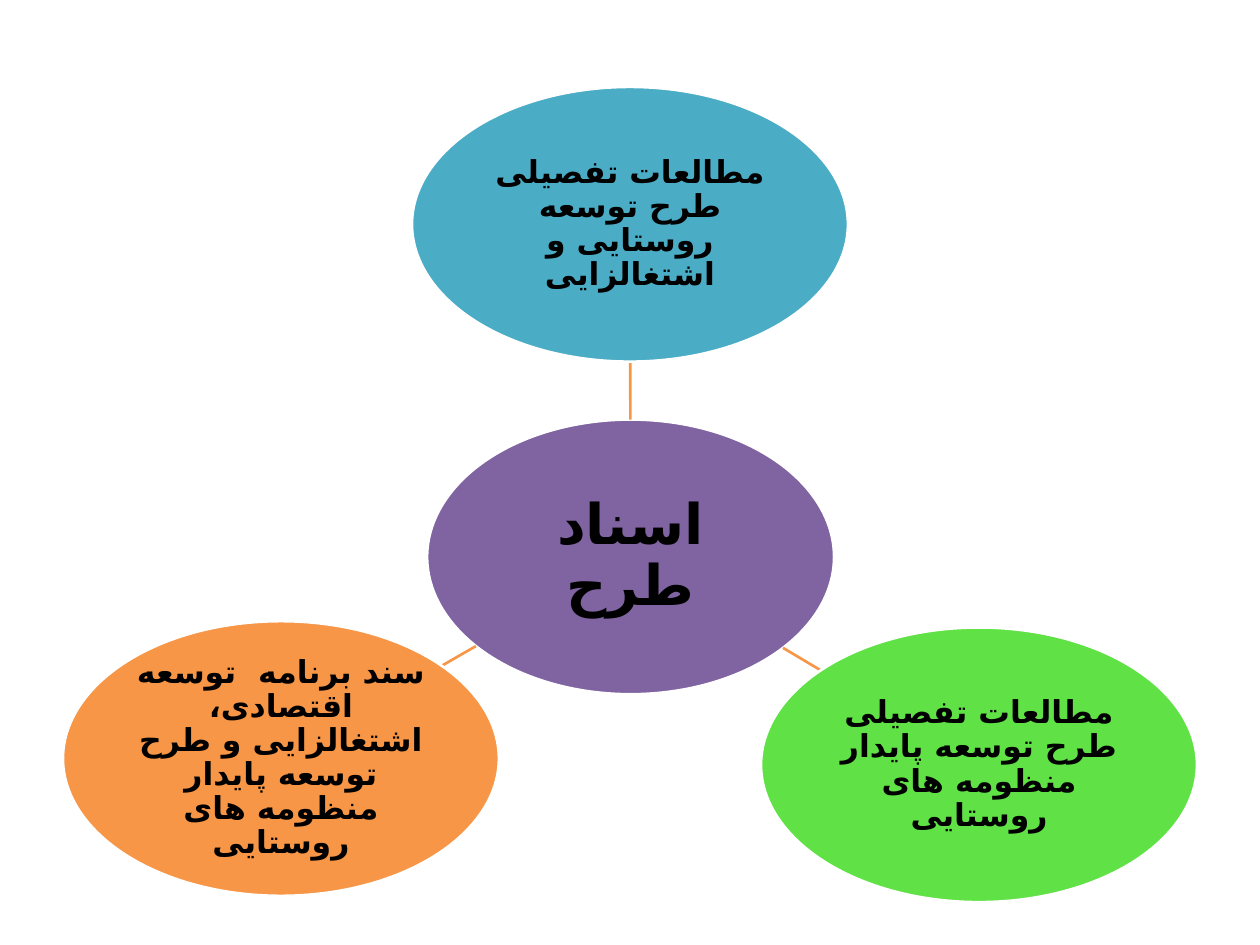
import math

import pptx
import pptx.dml.color
import pptx.enum.shapes
import pptx.enum.text
import pptx.oxml
import pptx.oxml.ns
import pptx.util

WIDTH, HEIGHT = 10, 7.5
FONT = "TeX Gyre Schola"
PERSIAN_FONT = "DejaVu Sans"
COLOURS = {
    "hub": "8064A2",
    "top": "4BACC6",
    "right": "60E146",
    "left": "F79646",
    "spoke": "F79646",
    "outline": "FFFFFF",
    "text": "000000",
}
HUB = {"box": (3.39, 3.33, 3.23, 2.18), "text": "اسناد طرح", "size": 32, "inset": 0.02}
SATELLITE_SIZE = (3.46, 2.18)
SATELLITES = [
    ("top", (3.27, 0.69), "مطالعات تفصیلی طرح توسعه روستایی و اشتغالزایی", False),
    ("right", (6.04, 4.98), "مطالعات تفصیلی طرح توسعه پایدار منظومه های روستایی", True),
    ("left", (0.5, 4.93),
     "سند برنامه  توسعه اقتصادی، اشتغالزایی و طرح توسعه پایدار منظومه های روستایی", True),
]


def colour(name):
    return pptx.dml.color.RGBColor.from_string(COLOURS[name])


def write_text(shape, text, size=18, inset=0.01, right_to_left=False):
    frame = shape.text_frame
    frame.word_wrap = True
    frame.vertical_anchor = pptx.enum.text.MSO_ANCHOR.MIDDLE
    frame.margin_left = frame.margin_right = pptx.util.Inches(inset)
    frame.margin_top = frame.margin_bottom = pptx.util.Inches(inset)
    paragraph = frame.paragraphs[0]
    paragraph.alignment = pptx.enum.text.PP_ALIGN.CENTER
    paragraph.line_spacing = 0.9
    if right_to_left:
        paragraph._p.get_or_add_pPr().set("rtl", "1")
    run = paragraph.add_run()
    run.text = text
    run.font.name = FONT
    run.font.size = pptx.util.Pt(size)
    run.font.bold = True
    run.font.color.rgb = colour("text")
    complex_script = pptx.oxml.parse_xml(
        f'<a:cs {pptx.oxml.ns.nsdecls("a")} typeface="{PERSIAN_FONT}"/>')
    run._r.get_or_add_rPr().append(complex_script)


def add_ellipse(slide, box, fill, text, **text_format):
    shape = slide.shapes.add_shape(
        pptx.enum.shapes.MSO_SHAPE.OVAL, *map(pptx.util.Inches, box))
    shape.shadow.inherit = False
    shape.fill.solid()
    shape.fill.fore_color.rgb = colour(fill)
    shape.line.color.rgb = colour("outline")
    shape.line.width = pptx.util.Pt(1.5)
    write_text(shape, text, **text_format)


def centre(box):
    left, top, width, height = box
    return left + width / 2, top + height / 2


def edge_point(box, target):
    """Return where the ray from the ellipse's centre to target crosses its edge."""
    x, y = centre(box)
    across, down = target[0] - x, target[1] - y
    share = 1 / math.hypot(across / (box[2] / 2), down / (box[3] / 2))
    return x + across * share, y + down * share


def add_spoke(slide, inner_box, outer_box):
    start = edge_point(inner_box, centre(outer_box))
    end = edge_point(outer_box, centre(inner_box))
    connector = slide.shapes.add_connector(
        pptx.enum.shapes.MSO_CONNECTOR.STRAIGHT, *map(pptx.util.Inches, start + end))
    connector.line.color.rgb = colour("spoke")
    connector.line.width = pptx.util.Pt(1.5)
    connector._element.spPr.append(
        pptx.oxml.parse_xml(f'<a:effectLst {pptx.oxml.ns.nsdecls("a")}/>'))


def add_radial_diagram(slide, area):
    """Draw the hub and satellites, scaled from the slide's grid to the area."""
    left, top, width, height = area
    scale_x, scale_y = width / WIDTH, height / HEIGHT

    def place(box):
        return (left + box[0] * scale_x, top + box[1] * scale_y,
                box[2] * scale_x, box[3] * scale_y)

    hub_box = place(HUB["box"])
    add_ellipse(slide, hub_box, "hub", HUB["text"], size=HUB["size"], inset=HUB["inset"])
    for name, corner, text, right_to_left in SATELLITES:
        box = place(corner + SATELLITE_SIZE)
        add_spoke(slide, hub_box, box)
        add_ellipse(slide, box, name, text, right_to_left=right_to_left)


def main():
    presentation = pptx.Presentation()
    presentation.slide_width = pptx.util.Inches(WIDTH)
    presentation.slide_height = pptx.util.Inches(HEIGHT)
    slide = presentation.slides.add_slide(presentation.slide_layouts[6])
    add_radial_diagram(slide, (0, 0, WIDTH, HEIGHT))
    presentation.save("out.pptx")


if __name__ == "__main__":
    main()
